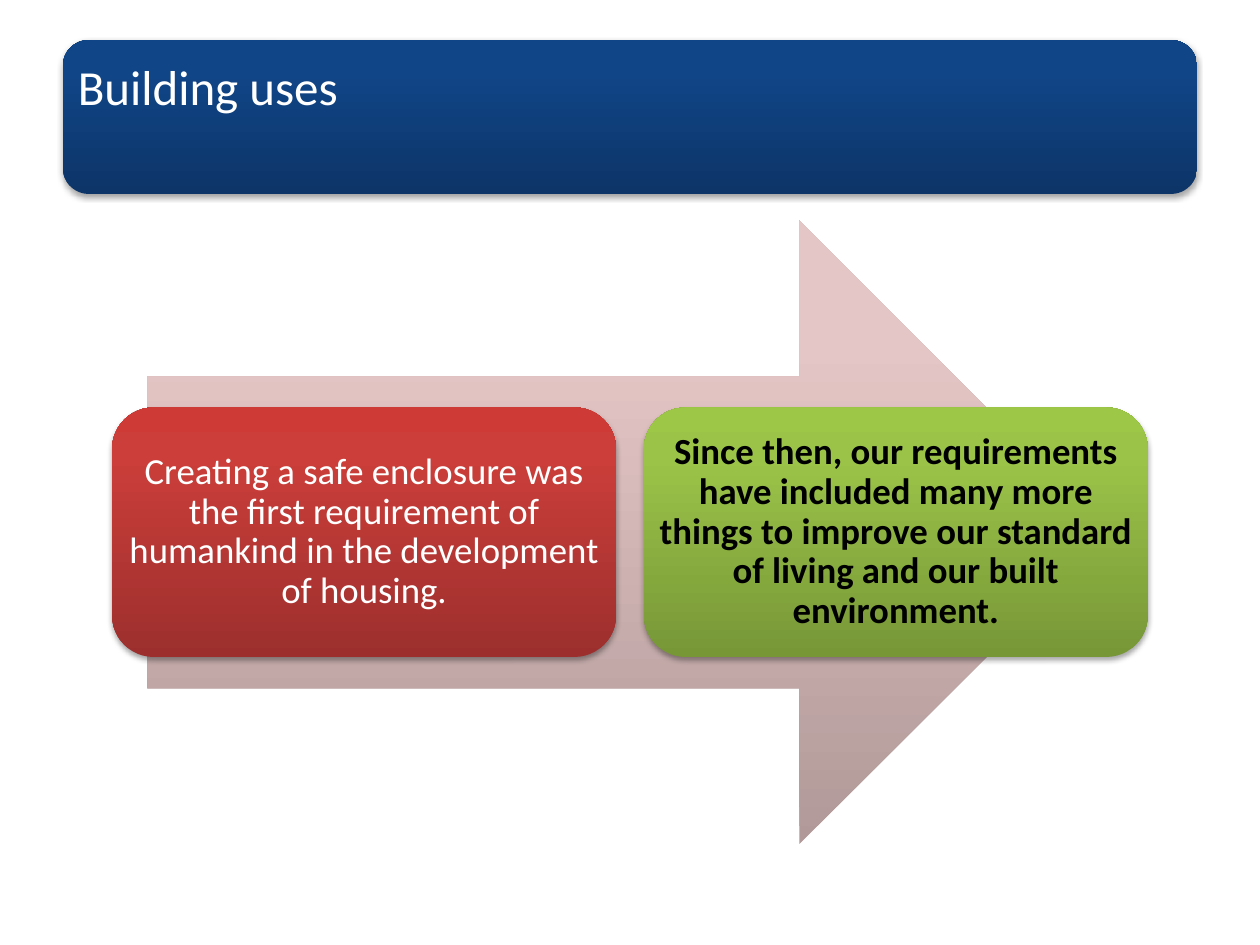
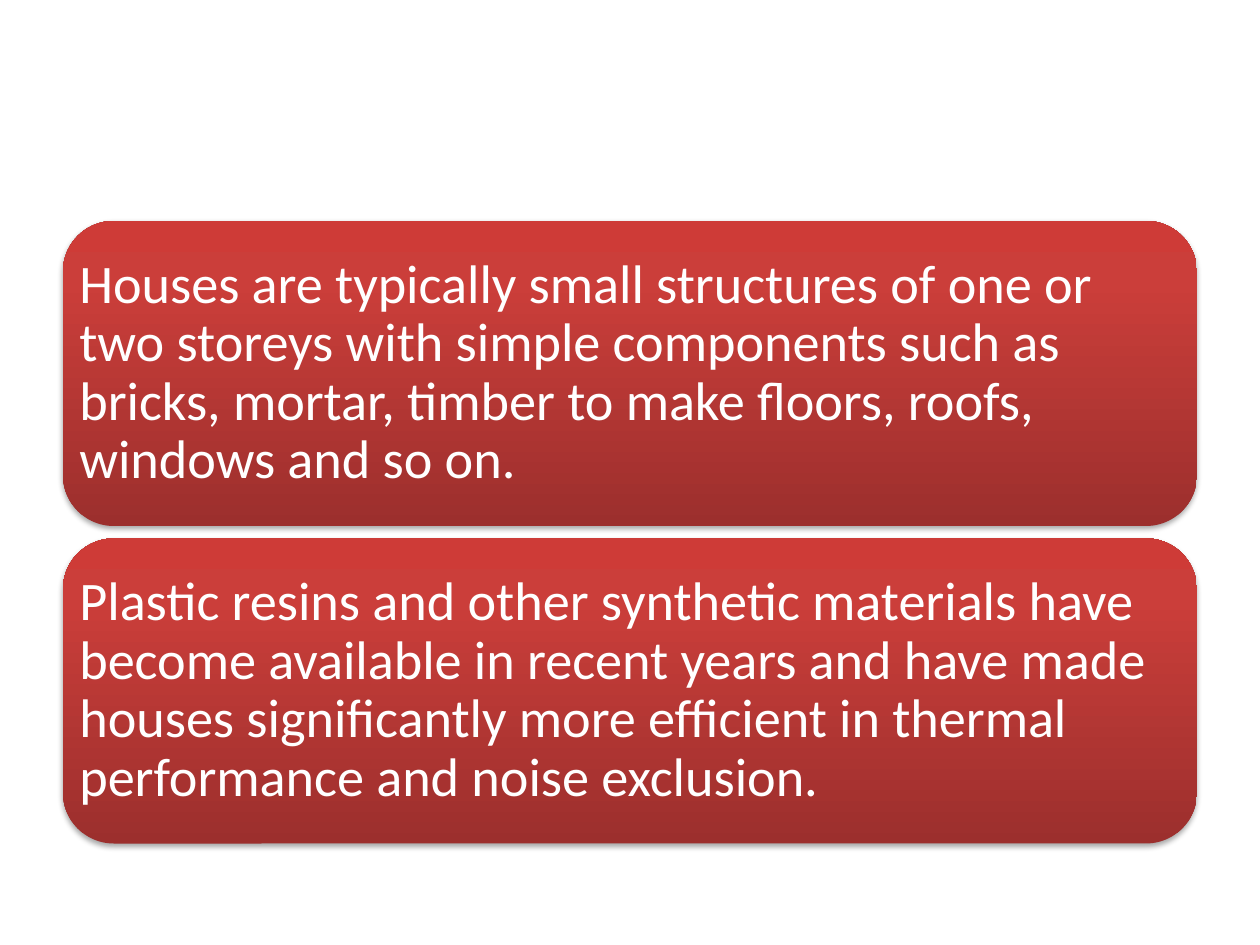
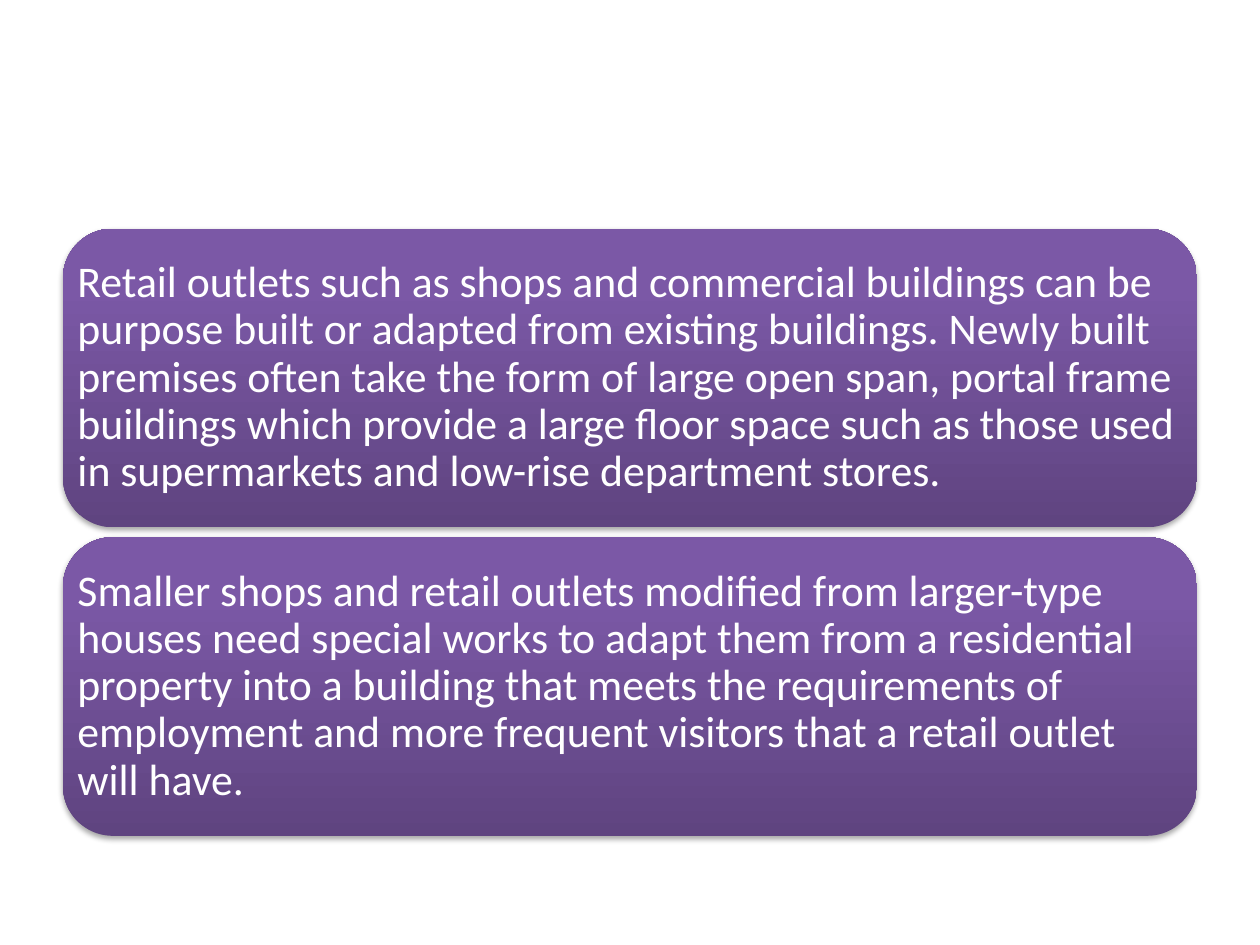
"""Build three slides on how buildings are used, with gradient cards."""
from copy import deepcopy

from lxml import etree
from pptx import Presentation
from pptx import util as u
from pptx.dml.color import RGBColor
from pptx.enum import shapes, text
from pptx.oxml.ns import qn

WIDTH, HEIGHT = 25.4, 19.05
MARGIN = 1.27
CONTENT_MIDDLE = 10.73
FONT = "Calibri"
WHITE, BLACK = "FFFFFF", "000000"
STOPS = (0, 0.8, 1)
GRADIENTS = {
    "blue": ("0D3568", "104587", "0E458A"),
    "pink": ("B09998", "E5C6C6", "E6C7C6"),
    "red": ("9C2F2D", "CB3E3A", "CE3B37"),
    "green": ("779737", "9BC348", "9DC746"),
    "purple": ("5F4480", "7B58A6", "7C57A8"),
}
LEFT, CENTER = text.PP_ALIGN.LEFT, text.PP_ALIGN.CENTER
TOP, MIDDLE = text.MSO_ANCHOR.TOP, text.MSO_ANCHOR.MIDDLE

TITLE = "Building uses"
BANNER = (MARGIN, 0.81, WIDTH - 2 * MARGIN, 3.1)
ARROW_LEFT, ARROW_WIDTH, ARROW_HEIGHT = 2.97, 19.43, 12.57
CARD_WIDTH, CARD_HEIGHT, CARD_GAP = 10.16, 5.03, 0.56
STEPS = [
    ("Creating a safe enclosure was the first requirement of humankind in the "
     "development of housing.", "red", {"color": WHITE}),
    ("Since then, our requirements have included many more things to improve our "
     "standard of living and our built environment.", "green",
     {"color": BLACK, "bold": True}),
]
STACKS = [
    {"gradient": "red", "size": 31, "height": 6.15, "gap": 0.25, "inset": 0.03, "texts": [
        "Houses are typically small structures of one or two storeys with simple "
        "components such as bricks, mortar, timber to make floors, roofs, windows "
        "and so on.",
        "Plastic resins and other synthetic materials have become available in "
        "recent years and have made houses significantly more efficient in thermal "
        "performance and noise exclusion.",
    ]},
    {"gradient": "purple", "size": 25, "height": 6.02, "gap": 0.2, "inset": 0, "texts": [
        "Retail outlets such as shops and commercial buildings can be purpose built "
        "or adapted from existing buildings. Newly built premises often take the "
        "form of large open span, portal frame buildings which provide a large floor "
        "space such as those used in supermarkets and low-rise department stores.",
        "Smaller shops and retail outlets modified from larger-type houses need "
        "special works to adapt them from a residential property into a building "
        "that meets the requirements of employment and more frequent visitors that "
        "a retail outlet will have.",
    ]},
]


def rgb(value):
    """Turn a hex string into a colour."""
    return RGBColor.from_string(value)


def apply(target, values):
    """Set each named attribute on the target."""
    for name, value in values.items():
        setattr(target, name, value)


def positions(count, size, gap, middle):
    """Return the starts of equal parts centred on a point."""
    start = middle - (count * size + (count - 1) * gap) / 2
    return [start + index * (size + gap) for index in range(count)]


def add_gradient_shape(page, kind, place, gradient, shadow=True):
    """Add a borderless preset shape with a vertical gradient."""
    shape = page.shapes.add_shape(kind, *map(u.Cm, place))
    shape.line.fill.background()
    shape.fill.gradient()
    shape.fill.gradient_angle = 90
    stop_list = shape.element.spPr.find(".//" + qn("a:gsLst"))
    stop_list.append(deepcopy(stop_list[0]))
    for stop, position, color in zip(shape.fill.gradient_stops, STOPS, GRADIENTS[gradient]):
        stop.position = position
        stop.color.rgb = rgb(color)
    shape.shadow.inherit = False
    if shadow:
        effects = shape.element.spPr.find(qn("a:effectLst"))
        outer = etree.SubElement(effects, qn("a:outerShdw"), blurRad="39370",
                                 dist="22860", dir="5400000", rotWithShape="0")
        tint = etree.SubElement(outer, qn("a:srgbClr"), val=BLACK)
        etree.SubElement(tint, qn("a:alpha"), val="35000")
    return shape


def write(shape, words, size, color=WHITE, bold=False, align=LEFT, anchor=MIDDLE,
          inset=0, top=0):
    """Put one formatted paragraph into a shape."""
    frame = shape.text_frame
    frame.text = words
    apply(frame, {"word_wrap": True, "auto_size": text.MSO_AUTO_SIZE.NONE,
                  "vertical_anchor": anchor, "margin_left": u.Cm(inset),
                  "margin_right": u.Cm(inset), "margin_top": u.Cm(top),
                  "margin_bottom": 0})
    para = frame.paragraphs[0]
    apply(para, {"alignment": align, "line_spacing": 0.9})
    span = para.runs[0]
    apply(span.font, {"name": FONT, "size": u.Pt(size), "bold": bold})
    span.font.color.rgb = rgb(color)


def add_card(page, place, gradient, words, **style):
    """Add a rounded card with its text."""
    card = add_gradient_shape(page, shapes.MSO_SHAPE.ROUNDED_RECTANGLE, place, gradient)
    write(card, words, **style)


def add_title(page):
    """Add the banner and lay the title over it."""
    banner = add_gradient_shape(page, shapes.MSO_SHAPE.ROUNDED_RECTANGLE, BANNER, "blue")
    title = page.shapes.title
    apply(title, dict(zip(("left", "top", "width", "height"), map(u.Cm, BANNER))))
    write(title, TITLE, size=28, anchor=TOP, inset=0.3, top=0.46)
    banner.element.addnext(title.element)


def build_steps(deck):
    """Build the slide of cards on an arrow."""
    page = deck.slides.add_slide(deck.slide_layouts[5])
    add_title(page)
    arrow_top = CONTENT_MIDDLE - ARROW_HEIGHT / 2
    add_gradient_shape(page, shapes.MSO_SHAPE.RIGHT_ARROW,
                       (ARROW_LEFT, arrow_top, ARROW_WIDTH, ARROW_HEIGHT),
                       "pink", shadow=False)
    card_top = CONTENT_MIDDLE - CARD_HEIGHT / 2
    lefts = positions(len(STEPS), CARD_WIDTH, CARD_GAP, WIDTH / 2)
    for left, (words, gradient, style) in zip(lefts, STEPS):
        add_card(page, (left, card_top, CARD_WIDTH, CARD_HEIGHT), gradient, words,
                 size=21, align=CENTER, **style)


def build_stack(deck, stack):
    """Build a slide of full-width cards, one above the other."""
    page = deck.slides.add_slide(deck.slide_layouts[6])
    tops = positions(len(stack["texts"]), stack["height"], stack["gap"], CONTENT_MIDDLE)
    for top, words in zip(tops, stack["texts"]):
        add_card(page, (MARGIN, top, WIDTH - 2 * MARGIN, stack["height"]),
                 stack["gradient"], words, size=stack["size"], inset=stack["inset"])


def main():
    """Build and save the deck."""
    deck = Presentation()
    apply(deck, {"slide_width": u.Cm(WIDTH), "slide_height": u.Cm(HEIGHT)})
    build_steps(deck)
    for stack in STACKS:
        build_stack(deck, stack)
    deck.save("out.pptx")


if __name__ == "__main__":
    main()
